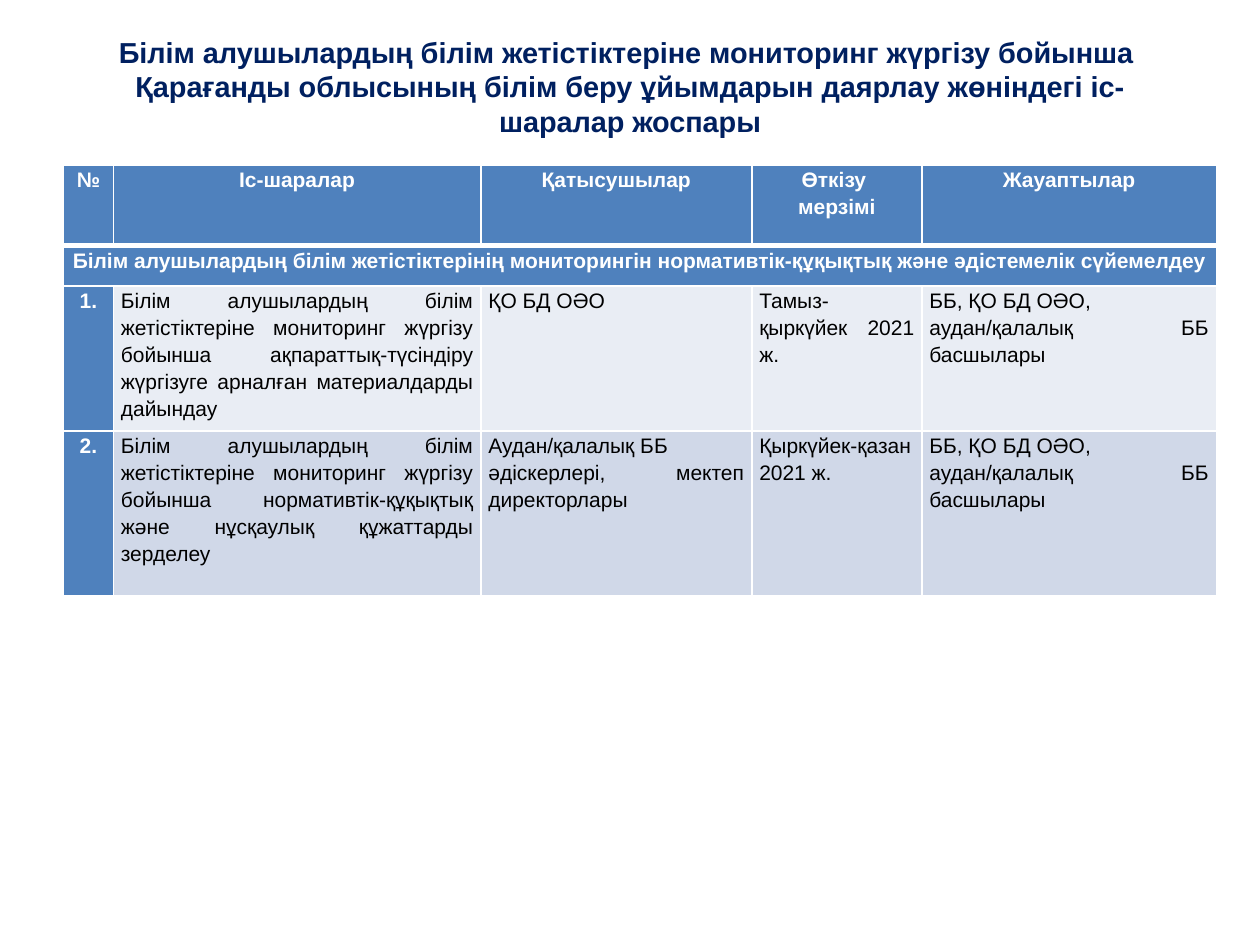
"""Build the slide with the action plan for monitoring learning achievements."""
from lxml.etree import SubElement
from pptx import Presentation
from pptx.dml.color import RGBColor
from pptx.enum.text import MSO_ANCHOR, PP_ALIGN
from pptx.oxml.ns import qn
from pptx.util import Pt


def color(value):
    return RGBColor.from_string(value)


def write(frame, lines, align, spacing, size, ink, bold):
    for index, line in enumerate(lines):
        para = frame.paragraphs[0] if index == 0 else frame.add_paragraph()
        para.alignment = align
        para.line_spacing = spacing
        span = para.add_run()
        span.text = line
        for name, value in {"name": "Arial", "size": Pt(size), "bold": bold}.items():
            setattr(span.font, name, value)
        span.font.color.rgb = color(ink)


deck = Presentation()
deck.slide_width, deck.slide_height = Pt(720), Pt(540)
page = deck.slides.add_slide(deck.slide_layouts[6])

box = page.shapes.add_textbox(Pt(36), Pt(21.6), Pt(648), Pt(55.4))
title_format = {"word_wrap": True, "vertical_anchor": MSO_ANCHOR.MIDDLE,
                "margin_top": 0, "margin_bottom": 0, "margin_left": Pt(7.2), "margin_right": Pt(7.2)}
for name, value in title_format.items():
    setattr(box.text_frame, name, value)
title = [
    "Білім алушылардың білім жетістіктеріне мониторинг жүргізу бойынша ",
    "Қарағанды облысының білім беру ұйымдарын даярлау жөніндегі іс-шаралар жоспары",
]
write(box.text_frame, title, PP_ALIGN.CENTER, 1, 16.5, "002060", True)

responsible = ["ББ, ҚО БД ОӘО,", "аудан/қалалық ББ басшылары "]
rows = [
    [["№"], ["Іс-шаралар"], ["Қатысушылар"], ["Өткізу ", "мерзімі"], ["Жауаптылар"]],
    [["Білім алушылардың білім жетістіктерінің мониторингін нормативтік-құқықтық "
      "және әдістемелік сүйемелдеу"], [], [], [], []],
    [["1."],
     ["Білім алушылардың білім жетістіктеріне мониторинг жүргізу бойынша "
      "ақпараттық-түсіндіру жүргізуге арналған материалдарды дайындау "],
     ["ҚО БД ОӘО"], ["Тамыз-қыркүйек 2021 ж."], responsible],
    [["2."],
     ["Білім алушылардың білім жетістіктеріне мониторинг жүргізу бойынша "
      "нормативтік-құқықтық және нұсқаулық құжаттарды зерделеу"],
     ["Аудан/қалалық ББ", "әдіскерлері, мектеп директорлары"],
     ["Қыркүйек-қазан 2021 ж."], responsible],
]
widths = [28.5, 210, 154.8, 97.2, 168.3]
heights = [46, 23.2, 81, 93.8]
body_fills = {2: "E9EDF4", 3: "D0D8E8"}
cell_format = {"margin_left": Pt(4.3), "margin_right": Pt(4.3), "margin_top": 0,
               "margin_bottom": 0, "vertical_anchor": MSO_ANCHOR.TOP}

table = page.shapes.add_table(len(rows), len(widths), Pt(36.3), Pt(94.4),
                              Pt(sum(widths)), Pt(sum(heights))).table
for column, width in zip(table.columns, widths):
    column.width = Pt(width)
for row, height in zip(table.rows, heights):
    row.height = Pt(height)
table.cell(1, 0).merge(table.cell(1, 4))

for row_index, row in enumerate(rows):
    for column_index, lines in enumerate(row):
        cell = table.cell(row_index, column_index)
        for name, value in cell_format.items():
            setattr(cell, name, value)
        properties = cell._tc.get_or_add_tcPr()
        for side in "LRTB":
            heavy = (row_index, side) in [(0, "B"), (1, "T")]
            border = SubElement(properties, qn(f"a:ln{side}"), w=str(Pt(3 if heavy else 1)))
            SubElement(SubElement(border, qn("a:solidFill")), qn("a:srgbClr"), val="FFFFFF")
        body = row_index in body_fills and column_index > 0
        cell.fill.solid()
        cell.fill.fore_color.rgb = color(body_fills[row_index] if body else "4F81BD")
        write(cell.text_frame, lines, PP_ALIGN.JUSTIFY if body else PP_ALIGN.CENTER,
              1.15, 12, "000000" if body else "FFFFFF", not body)

deck.save("out.pptx")
